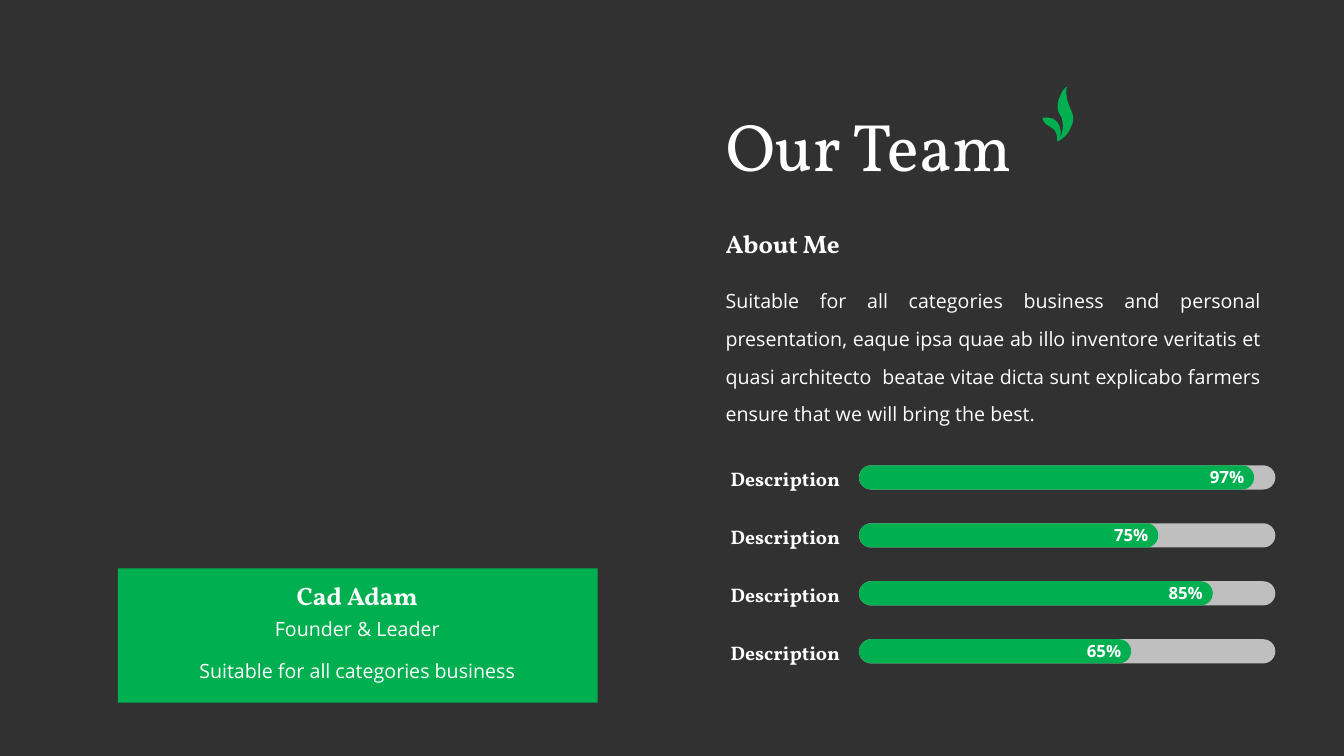
from pptx import Presentation
from pptx.dml.color import RGBColor
from pptx.enum.shapes import MSO_SHAPE
from pptx.enum.text import MSO_ANCHOR, PP_ALIGN
from pptx.util import Pt

DARK, GREEN, GREY, WHITE = "313131", "00B050", "BFBFBF", "FFFFFF"
SERIF, SANS = "Vollkorn", "Open Sans"
SKILLS = [("97%", 282.2), ("75%", 213.8), ("85%", 252.7), ("65%", 194.4)]
BAR_LEFT, BAR_TOP, BAR_PITCH = 613.6, 332.4, 41.4
BAR_WIDTH, BAR_HEIGHT = 297.4, 17.3
ABOUT = (
    "Suitable for all categories business and personal presentation, "
    "eaque ipsa quae ab illo inventore veritatis et quasi architecto  "
    "beatae vitae dicta sunt explicabo farmers ensure that we will bring the best."
)
SMALL_LEAF = [
    [(0, 310)],
    [(10, 340), (20, 360), (50, 380)],
    [(60, 390), (70, 390), (80, 400)],
    [(120, 420), (150, 450), (150, 540)],
    [(160, 540)],
    [(180, 500), (190, 460), (180, 420)],
    [(165, 360), (140, 340), (110, 320)],
    [(80, 310), (50, 300), (0, 310)],
]
LARGE_LEAF = [
    [(250, 0)],
    [(230, 10)],
    [(210, 30), (190, 60), (180, 90)],
    [(150, 140), (145, 200), (160, 250)],
    [(190, 300)],
    [(210, 360), (210, 420), (190, 480)],
    [(160, 540)],
    [(210, 510), (260, 470), (280, 410)],
    [(310, 360), (315, 310), (300, 270)],
    [(290, 240)],
    [(260, 180), (230, 90), (240, 20)],
]


def color(value):
    """Turn a hex string into a colour."""
    return RGBColor.from_string(value)


def paint(shape, fill):
    """Give a shape a flat fill without line or shadow."""
    shape.shadow.inherit = False
    shape.fill.solid()
    shape.fill.fore_color.rgb = color(fill)
    shape.line.fill.background()


def write(box, text, font, size, bold=False, align=PP_ALIGN.LEFT, spacing=1.0,
          anchor=MSO_ANCHOR.MIDDLE, wrap=True):
    """Set and format the single paragraph of a box."""
    frame = box.text_frame
    frame.text = text
    frame.word_wrap = wrap
    frame.vertical_anchor = anchor
    para = frame.paragraphs[0]
    para.alignment = align
    para.line_spacing = spacing
    span = para.runs[0]
    span.font.name = font
    span.font.size = Pt(size)
    span.font.bold = bold
    span.font.color.rgb = color(WHITE)


def add_text(page, place, *content, **style):
    """Add a text box at a place given in points."""
    box = page.shapes.add_textbox(*map(Pt, place))
    write(box, *content, **style)


def add_block(page, kind, place, fill):
    """Add a filled preset shape at a place given in points."""
    block = page.shapes.add_shape(kind, *map(Pt, place))
    paint(block, fill)
    return block


def outline(segments, steps=6):
    """Flatten lines and cubic curves into points."""
    points = list(segments[0])
    for segment in segments[1:]:
        if len(segment) == 1:
            points += segment
            continue
        corners = [points[-1], *segment]
        for step in range(1, steps + 1):
            t = step / steps
            weights = ((1 - t) ** 3, 3 * t * (1 - t) ** 2, 3 * t * t * (1 - t), t ** 3)
            points.append(tuple(
                sum(weight * corner[axis] for weight, corner in zip(weights, corners))
                for axis in (0, 1)
            ))
    return points


def add_leaves(page, left, top):
    """Draw the two leaves beside the title as one shape."""
    small, large = outline(SMALL_LEAF), outline(LARGE_LEAF)
    builder = page.shapes.build_freeform(*small[0], scale=Pt(0.072))
    builder.add_line_segments(small[1:], close=True)
    builder.move_to(*large[0])
    builder.add_line_segments(large[1:], close=True)
    paint(builder.convert_to_shape(Pt(left), Pt(top)), GREEN)


def add_skill(page, index, percent, width):
    """Add one labelled progress bar."""
    top = BAR_TOP + index * BAR_PITCH
    add_text(page, (514.8, top - 1.2, 105.8, 23), "Description", SERIF, 14,
             bold=True, spacing=0.95)
    for length, fill in ((BAR_WIDTH, GREY), (width, GREEN)):
        bar = add_block(page, MSO_SHAPE.ROUNDED_RECTANGLE,
                        (BAR_LEFT, top, length, BAR_HEIGHT), fill)
        bar.adjustments[0] = 0.5
    add_text(page, (BAR_LEFT + width - 39.6, top - 2.2, 39.6, 21.6), percent, SANS, 12,
             bold=True, align=PP_ALIGN.RIGHT, anchor=MSO_ANCHOR.TOP, wrap=False)


def add_title(page):
    """Place and format the title placeholder."""
    title = page.shapes.title
    title.left, title.top, title.width, title.height = map(Pt, (511.2, 70.6, 448, 72))
    write(title, "Our Team", SERIF, 48, spacing=0.9)


def add_member_card(page):
    """Add the green card naming the team member."""
    center = PP_ALIGN.CENTER
    add_block(page, MSO_SHAPE.RECTANGLE, (84.2, 406.1, 342.7, 95.8), GREEN)
    add_text(page, (188.6, 411.1, 133.2, 28.8), "Cad Adam", SERIF, 18,
             bold=True, align=center)
    add_text(page, (154.1, 437, 202.3, 24.5), "Founder & Leader", SANS, 14, align=center)
    add_text(page, (117.4, 459.4, 275.8, 30.2), "Suitable for all categories business",
             SANS, 14, align=center, spacing=1.5)


def main():
    """Build the team slide and save it."""
    deck = Presentation()
    deck.slide_width, deck.slide_height = Pt(960), Pt(540)
    page = deck.slides.add_slide(deck.slide_layouts[5])
    page.background.fill.solid()
    page.background.fill.fore_color.rgb = color(DARK)
    add_title(page)
    add_leaves(page, 744.5, 61.9)
    add_member_card(page)
    add_text(page, (511.2, 159.8, 133.2, 28.8), "About Me", SERIF, 18, bold=True)
    add_text(page, (511.2, 193, 396.7, 130), ABOUT, SANS, 14, align=PP_ALIGN.JUSTIFY,
             spacing=1.6, anchor=MSO_ANCHOR.TOP)
    for index, (percent, width) in enumerate(SKILLS):
        add_skill(page, index, percent, width)
    deck.save("out.pptx")


if __name__ == "__main__":
    main()
